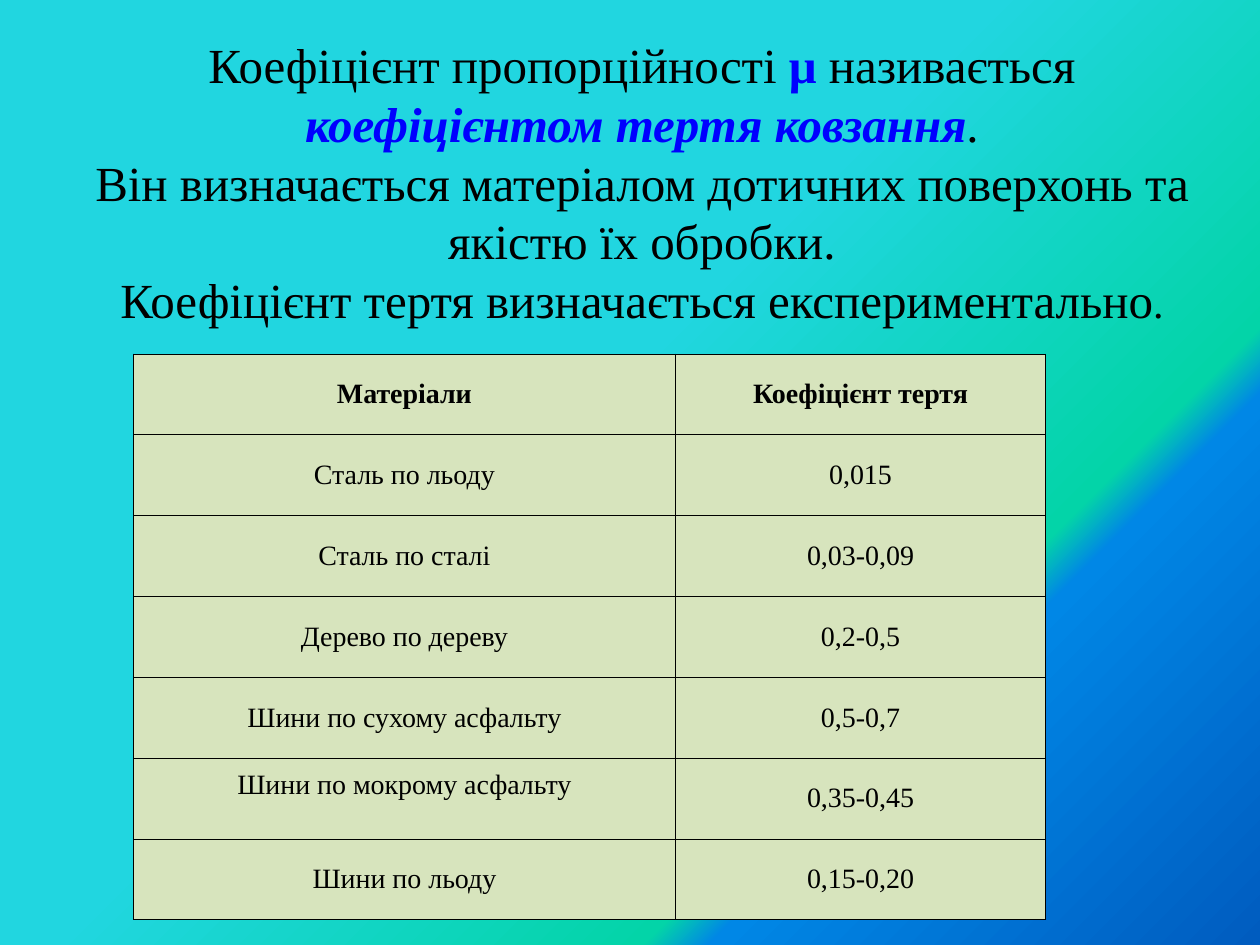
from lxml.etree import SubElement
from pptx import Presentation
from pptx.dml.color import RGBColor
from pptx.enum.text import MSO_ANCHOR, MSO_AUTO_SIZE, PP_ALIGN
from pptx.oxml import parse_xml
from pptx.oxml.ns import nsdecls, qn
from pptx.util import Inches, Pt

FONT = "Times New Roman"
HUES = {"text": "000000", "term": "0000FF", "cell": "D7E4BD", "line": "000000"}
STOPS = [(45, "21D6E0"), (72, "03D4A8"), (75, "0087E6"), (100, "005CBF")]


def add_run(para, text, size, hue="text", **style):
    run = para.add_run()
    run.text = text
    look = {"name": FONT, "size": Pt(size), "bold": False, "italic": False}
    for key, value in (look | style).items():
        setattr(run.font, key, value)
    run.font.color.rgb = RGBColor.from_string(HUES[hue])


def add_edges(cell):
    """Draw a thin line on all four sides of a table cell."""
    props = cell._tc.get_or_add_tcPr()
    for spot, side in enumerate(("lnL", "lnR", "lnT", "lnB")):
        line = parse_xml(f'<a:{side} {nsdecls("a")} w="{Pt(0.45)}"/>')
        fill = SubElement(line, qn("a:solidFill"))
        SubElement(fill, qn("a:srgbClr"), val=HUES["line"])
        props.insert(spot, line)


deck = Presentation()
deck.slide_width, deck.slide_height = Inches(10), Inches(7.5)
slide = deck.slides.add_slide(deck.slide_layouts[5])

# Background, shaded from the top left corner
back = slide.background.fill
back.gradient()
grad = slide._element.find(".//" + qn("a:gradFill"))
for child in list(grad):
    grad.remove(child)
stops = SubElement(grad, qn("a:gsLst"))
for pos, hue in STOPS:
    stop = SubElement(stops, qn("a:gs"), pos=str(pos * 1000))
    SubElement(stop, qn("a:srgbClr"), val=hue)
shade = SubElement(grad, qn("a:path"), path="circle")
SubElement(shade, qn("a:fillToRect"), r="100000", b="100000")

# Title
title = slide.shapes.title
place = {"left": 0.43, "top": 0.21, "width": 9.33, "height": 2.46}
for key, value in place.items():
    setattr(title, key, Inches(value))
frame = title.text_frame
frame.word_wrap = True
frame.auto_size = MSO_AUTO_SIZE.SHAPE_TO_FIT_TEXT
frame.vertical_anchor = MSO_ANCHOR.MIDDLE

lines = [
    [
        ("Коефіцієнт пропорційності ", 28, {}),
        ("μ", 28, {"hue": "term", "bold": True}),
        (" називається ", 28, {}),
        ("коефіцієнтом тертя ковзання", 28,
         {"hue": "term", "bold": True, "italic": True}),
        (".", 28, {}),
    ],
    [("Він визначається матеріалом дотичних поверхонь та якістю їх обробки.",
      28, {})],
    [("Коефіцієнт тертя визначається експериментально", 28, {}),
     (".", 24, {})],
]
for num, line in enumerate(lines):
    para = frame.add_paragraph() if num else frame.paragraphs[0]
    para.alignment = PP_ALIGN.CENTER
    for text, size, style in line:
        add_run(para, text, size, **style)

# Table of friction values
rows = [
    ("Матеріали", "Коефіцієнт тертя"),
    ("Сталь по льоду", "0,015"),
    ("Сталь по сталі", "0,03-0,09"),
    ("Дерево по дереву", "0,2-0,5"),
    ("Шини по сухому асфальту", "0,5-0,7"),
    ("Шини по мокрому асфальту", "0,35-0,45"),
    ("Шини по льоду", "0,15-0,20"),
]
table = slide.shapes.add_table(
    len(rows), 2, Inches(1.06), Inches(2.81), Inches(7.24), Inches(4.49)
).table
for col, width in zip(table.columns, (4.3, 2.94)):
    col.width = Inches(width)
for r, row in enumerate(rows):
    for c, text in enumerate(row):
        cell = table.cell(r, c)
        cell.fill.solid()
        cell.fill.fore_color.rgb = RGBColor.from_string(HUES["cell"])
        cell.vertical_anchor = MSO_ANCHOR.MIDDLE
        cell.margin_top, cell.margin_bottom = Inches(0.06), Inches(0.05)
        add_edges(cell)
        para = cell.text_frame.paragraphs[0]
        para.alignment = PP_ALIGN.CENTER
        para.line_spacing = 0.95
        add_run(para, text, 16, bold=r == 0)
table.cell(5, 0).margin_bottom = Inches(0.27)  # this label sits higher

deck.save("out.pptx")
